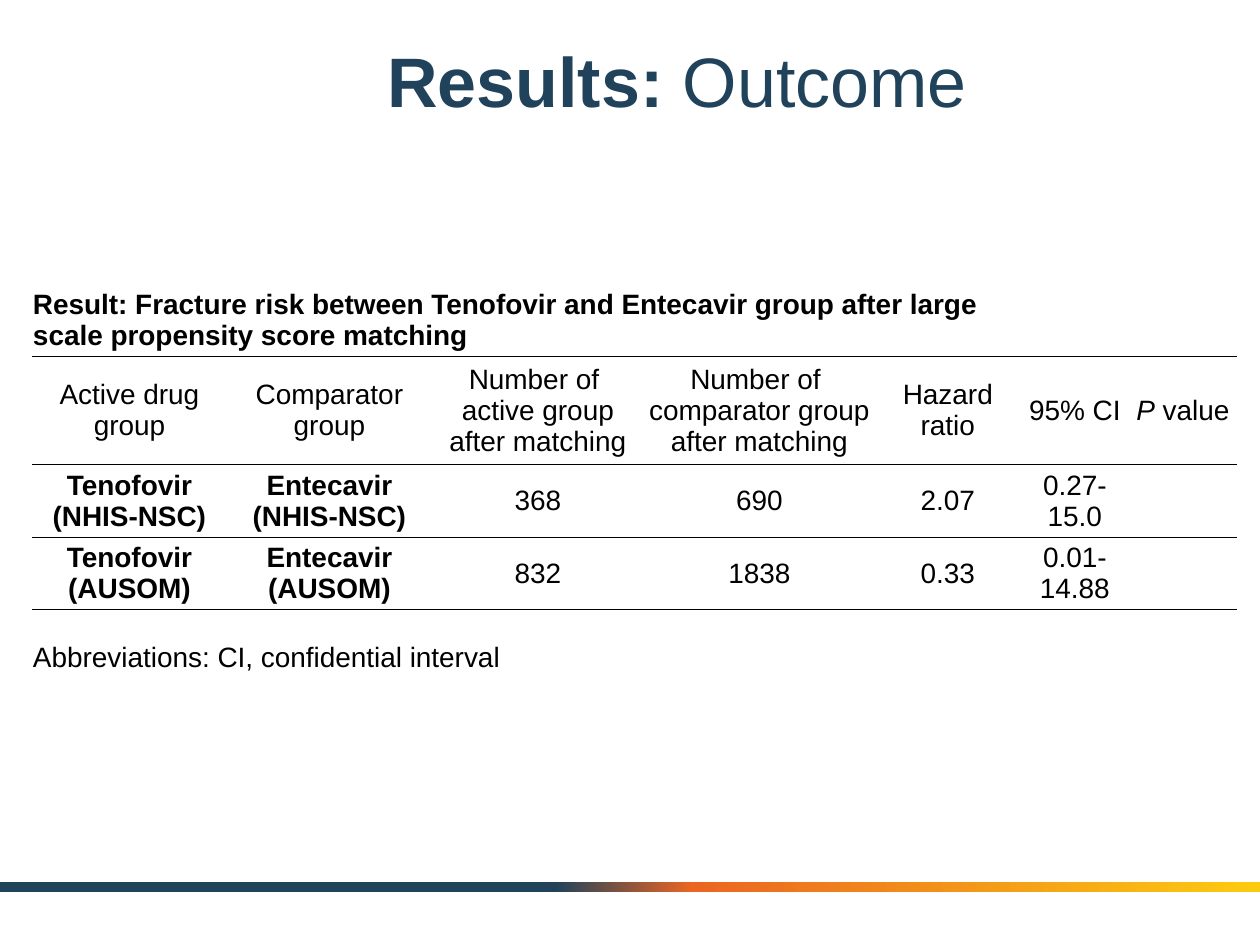
from copy import deepcopy
from pptx import Presentation
from pptx.dml.color import RGBColor as RGB
from pptx.enum.shapes import MSO_SHAPE as SHAPE
from pptx.enum.text import MSO_ANCHOR as ANCHOR, PP_ALIGN as ALIGN
from pptx.oxml import parse_xml
from pptx.oxml.ns import nsdecls, qn
from pptx.util import Pt

PX = 914400 / 126
NAVY = RGB(0x20, 0x42, 0x5A)
ORANGE = RGB(0xEB, 0x66, 0x22)
YELLOW = RGB(0xFC, 0xCB, 0x10)
BLACK = RGB(0, 0, 0)


def px(*nums):
    return [round(n * PX) for n in nums]


def edge(cell, side, show):
    paint = f'<a:solidFill><a:srgbClr val="{BLACK}"/></a:solidFill>' if show else "<a:noFill/>"
    cell._tc.get_or_add_tcPr().append(parse_xml(
        f'<a:ln{side} {nsdecls("a")} w="6350">{paint}</a:ln{side}>'))


prs = Presentation()
prs.slide_width, prs.slide_height = px(1260, 945)
slide = prs.slides.add_slide(prs.slide_layouts[5])

# Gradient bar at the foot
bar = slide.shapes.add_shape(SHAPE.RECTANGLE, *px(0, 882, 1260, 10))
bar.shadow.inherit = False
bar.line.fill.background()
bar.fill.gradient()
bar.fill.gradient_angle = 0
stops = bar._element.spPr.find(".//" + qn("a:gsLst"))
stops.append(deepcopy(stops[-1]))
for stop, pos, color in zip(bar.fill.gradient_stops, (0.44, 0.55, 1), (NAVY, ORANGE, YELLOW)):
    stop.position = pos
    stop.color.rgb = color

# Title
title = slide.shapes.title
title.left, title.top, title.width, title.height = px(157, 22, 1040, 116)
frame = title.text_frame
frame.vertical_anchor = ANCHOR.MIDDLE
para = frame.paragraphs[0]
para.alignment = ALIGN.CENTER
for text, bold in (("Results: ", True), ("Outcome", False)):
    run = para.add_run()
    run.text = text
    font = run.font
    font.name, font.size, font.bold = "Arial", Pt(40), bold
    font.color.rgb = NAVY

# Table: \v breaks a line, \n starts a paragraph
rows = [
    ["Result: Fracture risk between Tenofovir and Entecavir group after large "
     "scale propensity score matching"] + [""] * 6,
    ["Active drug group", "Comparator group", "Number of \vactive group\vafter matching",
     "Number of \vcomparator group after matching", "Hazard ratio", "95% CI", "P"],
    ["Tenofovir\v(NHIS-NSC)", "Entecavir\n(NHIS-NSC)", "368", "690", "2.07", "0.27-15.0", ""],
    ["Tenofovir\v(AUSOM)", "Entecavir\v(AUSOM)", "832", "1838", "0.33", "0.01-14.88", ""],
    ["Abbreviations: CI, confidential interval"] + [""] * 6,
]
widths = (195, 205, 212, 231, 146, 108, 108)
heights = (73, 108, 73, 72, 96)
last = len(rows) - 1
table = slide.shapes.add_table(
    len(rows), len(widths), *px(32, 283, sum(widths), sum(heights))).table
table.first_row = table.horz_banding = False
for col, width in zip(table.columns, px(*widths)):
    col.width = width
for row, height in zip(table.rows, px(*heights)):
    row.height = height
table.cell(0, 0).merge(table.cell(0, 4))
table.cell(last, 0).merge(table.cell(last, 6))

for r, row in enumerate(rows):
    for c, text in enumerate(row):
        cell = table.cell(r, c)
        cell.text_frame.text = text
        cell.vertical_anchor = ANCHOR.MIDDLE
        cell.margin_left, cell.margin_right, cell.margin_top, cell.margin_bottom = px(1, 1, 1, 0)
        # Rules run only between rows
        for side, show in (("L", False), ("R", False), ("T", r > 0), ("B", r < last)):
            edge(cell, side, show)
        cell.fill.background()
        if text == "P":
            cell.text_frame.paragraphs[0].add_run().text = " value"
        for para in cell.text_frame.paragraphs:
            para.alignment = ALIGN.LEFT if r in (0, last) else ALIGN.CENTER
            for run in para.runs:
                font = run.font
                font.name, font.size = "Arial", Pt(16)
                font.bold = r == 0 or (r in (2, 3) and c < 2)
                font.italic = run.text == "P"
                font.color.rgb = BLACK

prs.save("out.pptx")
